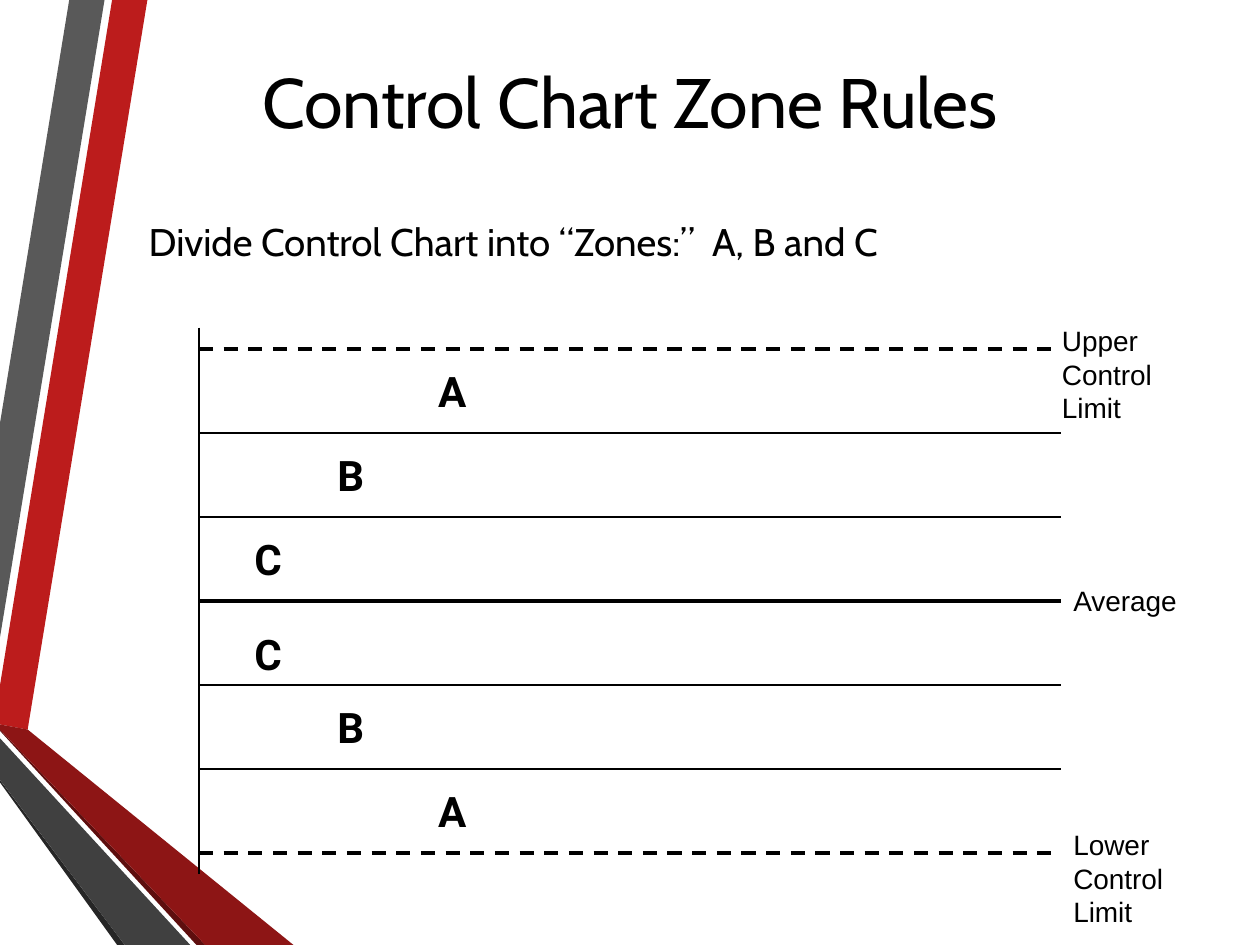
from dataclasses import dataclass

from lxml import etree
from pptx import Presentation
from pptx.dml.color import RGBColor
from pptx.enum.dml import MSO_LINE
from pptx.enum.shapes import MSO_CONNECTOR
from pptx.enum.text import MSO_ANCHOR, MSO_AUTO_SIZE, PP_ALIGN
from pptx.oxml.ns import qn
from pptx.util import Inches, Pt

STRAIGHT = MSO_CONNECTOR.STRAIGHT
DASH = MSO_LINE.DASH
MIDDLE = MSO_ANCHOR.MIDDLE
NO_FIT = MSO_AUTO_SIZE.NONE
GROW = MSO_AUTO_SIZE.SHAPE_TO_FIT_TEXT
CENTER, LEFT = PP_ALIGN.CENTER, PP_ALIGN.LEFT

BLACK = RGBColor(0, 0, 0)
RED = RGBColor(0xBC, 0x1C, 0x1C)
DEEP_RED = RGBColor(0x8D, 0x15, 0x15)
DARK_RED = RGBColor(0x5E, 0x0E, 0x0E)
GRAY = RGBColor(0x59, 0x59, 0x59)
DEEP_GRAY = RGBColor(0x40, 0x40, 0x40)
DARK_GRAY = RGBColor(0x26, 0x26, 0x26)

# Chart grid: six zones between the control limits
LEFT_X, RIGHT_X = 1.58, 8.42
TOP_Y, ZONE = 2.77, 4 / 6


@dataclass
class Ribbon:
    color: RGBColor
    points: list[tuple[int, int]]  # hundredths of an inch


@dataclass
class Rule:
    row: int
    width: float = 1
    dashed: bool = False


@dataclass
class Label:
    text: str
    x: float
    row: int
    shift: float  # from the grid line of the row
    width: float = 0.5
    height: float = 0.5
    size: int = 24
    font: str = "Roboto"
    bold: bool = True


@dataclass
class Limit(Label):
    size: int = 16
    font: str = "Arial"
    bold: bool = False


RIBBONS = [
    Ribbon(RED, [(0, 544), (0, 575), (22, 579), (117, 0), (89, 0)]),
    Ribbon(GRAY, [(83, 0), (55, 0), (0, 336), (0, 506)]),
    Ribbon(DARK_GRAY, [(0, 619), (0, 621), (93, 750), (99, 750)]),
    Ribbon(DARK_RED, [(0, 579), (0, 580), (156, 750), (163, 750)]),
    Ribbon(DEEP_RED, [(0, 579), (163, 750), (233, 750), (22, 579), (0, 575)]),
    Ribbon(DEEP_GRAY, [(0, 619), (99, 750), (151, 750), (0, 586)]),
]
RULES = [Rule(0, 2, True), Rule(1), Rule(2), Rule(3, 2),
         Rule(4), Rule(5), Rule(6, 2, True)]
LABELS = [
    Limit("Upper Control Limit", 8.33, 0, -0.25, 1.17, 0.91),
    Limit("Average", 8.42, 3, -0.19, 1.25, 0.37),
    Limit("Lower Control Limit", 8.42, 6, -0.25, 1.17, 0.91),
    Label("A", 3.38, 0, 0.08),
    Label("B", 2.58, 1, 0.08),
    Label("C", 1.92, 2, 0.08),
    Label("C", 1.92, 3, 0.17),
    Label("B", 2.58, 4, 0.08),
    Label("A", 3.38, 5, 0.08),
]


def row_y(row: int) -> float:
    return TOP_Y + row * ZONE


def style(shape, size: int, font: str, bold: bool = False) -> None:
    for run in shape.text_frame.paragraphs[0].runs:
        run.font.size, run.font.name, run.font.bold = Pt(size), font, bold
        run.font.color.rgb = BLACK


def draw_ribbon(slide, ribbon: Ribbon) -> None:
    start, *rest = ribbon.points
    outline = slide.shapes.build_freeform(*start, scale=Inches(0.01))
    outline.add_line_segments(rest, close=True)
    shape = outline.convert_to_shape()
    shape.shadow.inherit = False
    shape.fill.solid()
    shape.fill.fore_color.rgb = ribbon.color
    shape.line.fill.background()


def draw_line(slide, x1: float, y1: float, x2: float, y2: float,
              width: float = 1, dashed: bool = False) -> None:
    ends = [Inches(v) for v in (x1, y1, x2, y2)]
    line = slide.shapes.add_connector(STRAIGHT, *ends)
    line.line.color.rgb = BLACK
    line.line.width = Pt(width)
    if dashed:
        line.line.dash_style = DASH
    etree.SubElement(line._element.spPr, qn("a:effectLst"))


def draw_label(slide, label: Label) -> None:
    y = row_y(label.row) + label.shift
    area = [Inches(v) for v in (label.x, y, label.width, label.height)]
    box = slide.shapes.add_textbox(*area)
    box.text_frame.word_wrap = True
    box.text_frame.auto_size = GROW
    box.text_frame.text = label.text
    style(box, label.size, label.font, label.bold)


def fill_holder(shape, text: str, area: tuple, size: int, align) -> None:
    shape.left, shape.top, shape.width, shape.height = map(Inches, area)
    frame = shape.text_frame
    frame.text = text
    frame.auto_size = NO_FIT
    frame.vertical_anchor = MIDDLE
    frame.paragraphs[0].alignment = align
    style(shape, size, "Cabin")


def main() -> None:
    deck = Presentation()
    deck.slide_width, deck.slide_height = Inches(10), Inches(7.5)
    slide = deck.slides.add_slide(deck.slide_layouts[1])

    # Side ribbons
    for ribbon in RIBBONS:
        draw_ribbon(slide, ribbon)

    # Title and lead line
    fill_holder(slide.shapes.title, "Control Chart Zone Rules",
                (0.5, 0.17, 9, 1.25), 40, CENTER)
    body = slide.placeholders[1]
    fill_holder(body, "Divide Control Chart into “Zones:”  A, B and C",
                (1.08, 1.54, 8.25, 0.75), 22, LEFT)
    lead = body.text_frame.paragraphs[0]
    lead.space_before, lead.space_after = Pt(0), Pt(6)
    props = lead._p.get_or_add_pPr()
    props.set("marL", str(Inches(0.31)))
    props.set("indent", str(-Inches(0.31)))
    etree.SubElement(props, qn("a:buNone"))

    # Control chart
    draw_line(slide, LEFT_X, TOP_Y - 0.17, LEFT_X, row_y(6) + 0.17)
    for rule in RULES:
        y = row_y(rule.row)
        draw_line(slide, LEFT_X, y, RIGHT_X, y, rule.width, rule.dashed)
    for label in LABELS:
        draw_label(slide, label)

    deck.save("out.pptx")


if __name__ == "__main__":
    main()
